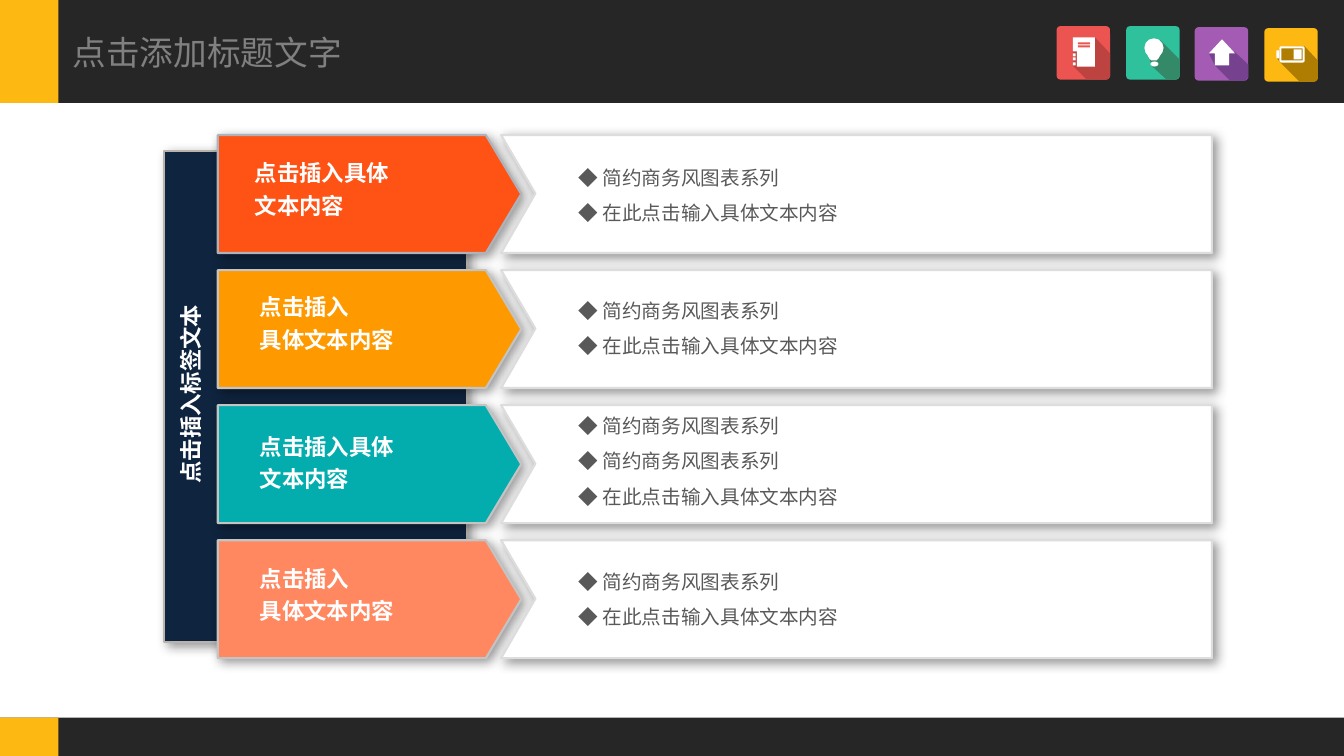
from lxml.etree import SubElement
from pptx import Presentation
from pptx.dml.color import RGBColor
from pptx.enum.shapes import MSO_SHAPE
from pptx.enum.text import MSO_AUTO_SIZE, PP_ALIGN
from pptx.oxml.ns import qn
from pptx.util import Inches, Pt

CELL = Inches(0.01)
COLUMNS, ROWS = 1333, 750
HEADER, FOOTER, ACCENT = 102, 38, 58
TILE = 53
CARD_TOP, CARD_PITCH, CARD_HEIGHT = 134, 134, 117

COLORS = {
    "bar": "262626", "yellow": "FDB812", "yellow_dark": "AF7D01",
    "green": "2FC19C", "green_dark": "348A68",
    "purple": "A45BB4", "purple_dark": "76428F",
    "red": "EC5451", "red_dark": "BD4341",
    "navy": "0F243E", "navy_edge": "B8B3AB", "white": "FFFFFF",
    "orange": "FF5215", "amber": "FF9900", "teal": "03ADAE", "salmon": "FF8860",
    "orange_edge": "AEB3BB", "grey_edge": "C4C4C4", "card_edge": "DDDDDD",
    "body": "595959", "title": "808080", "black": "000000",
}

SERIES = "◆ 简约商务风图表系列"
DETAIL = "◆ 在此点击输入具体文本内容"
CARDS = [
    ("orange", "orange_edge", ["点击插入具体", "文本内容"], (243, 148), [SERIES, DETAIL], 148),
    ("amber", "grey_edge", ["点击插入", "具体文本内容"], (248, 281), [SERIES, DETAIL], 280),
    ("teal", "grey_edge", ["点击插入具体", "文本内容"], (248, 419), [SERIES, SERIES, DETAIL], 394),
    ("salmon", "grey_edge", ["点击插入", "具体文本内容"], (248, 550), [SERIES, DETAIL], 549),
]


def rgb(name):
    return RGBColor.from_string(COLORS[name])


def paint(shape, fill, edge=None, width=1.5):
    shape.shadow.inherit = False
    if fill:
        shape.fill.solid()
        shape.fill.fore_color.rgb = rgb(fill)
    else:
        shape.fill.background()
    if edge:
        shape.line.color.rgb = rgb(edge)
        shape.line.width = Pt(width)
    else:
        shape.line.fill.background()
    return shape


def block(slide, left, top, width, height, fill, edge=None, kind=MSO_SHAPE.RECTANGLE):
    frame = [n * CELL for n in (left, top, width, height)]
    return paint(slide.shapes.add_shape(kind, *frame), fill, edge)


def polygon(slide, points, fill, edge=None):
    outline = slide.shapes.build_freeform(*points[0], scale=CELL)
    outline.add_line_segments(points[1:], close=True)
    return paint(outline.convert_to_shape(), fill, edge)


def cast_shadow(shape):
    effects = shape._element.spPr.find(qn("a:effectLst"))
    shadow = SubElement(effects, qn("a:outerShdw"), blurRad=str(Pt(8)), dist=str(Pt(3)),
                        dir=str(45 * 60000), algn="tl", rotWithShape="0")
    tint = SubElement(shadow, qn("a:srgbClr"), val=COLORS["black"])
    SubElement(tint, qn("a:alpha"), val="40000")


def write(slide, left, top, width, height, lines, size, color, spacing=1.0,
          bold=False, align=PP_ALIGN.LEFT, wrap=True):
    box = slide.shapes.add_textbox(*[n * CELL for n in (left, top, width, height)])
    frame = box.text_frame
    frame.word_wrap = wrap
    frame.auto_size = MSO_AUTO_SIZE.SHAPE_TO_FIT_TEXT
    for index, line in enumerate(lines):
        paragraph = frame.add_paragraph() if index else frame.paragraphs[0]
        paragraph.alignment = align
        paragraph.line_spacing = spacing
        run = paragraph.add_run()
        run.text = line
        run.font.name = "Arial"
        run.font.size = Pt(size)
        run.font.bold = bold
        run.font.color.rgb = rgb(color)
    return box


def tile(slide, left, top, color, shade):
    face = block(slide, left, top, TILE, TILE, color, kind=MSO_SHAPE.ROUNDED_RECTANGLE)
    face.adjustments[0] = 0.07
    polygon(slide, [(left + x, top + y) for x, y in shade], color + "_dark")


def notebook(slide, left, top):
    tile(slide, left, top, "red",
         [(38, 11), (53, 27), (53, 50), (50, 53), (30, 53), (16, 39), (16, 24)])
    block(slide, left + 20, top + 11, 18, 29, "white")
    block(slide, left + 16, top + 11, 4, 14, "white")
    for tab in (27, 31, 36):
        block(slide, left + 16, top + tab, 3, 3, "white")
    for stripe in (16, 19):
        block(slide, left + 21, top + stripe, 12, 2, "red")


def bulb(slide, left, top):
    tile(slide, left, top, "green",
         [(34, 14), (53, 33), (53, 50), (50, 53), (40, 53), (25, 39), (20, 17)])
    block(slide, left + 18, top + 12, 19, 19, "white", kind=MSO_SHAPE.OVAL)
    polygon(slide, [(left + x, top + y) for x, y in
                    [(19, 25), (36, 25), (32, 32), (30, 34), (25, 34), (23, 32)]], "white")
    block(slide, left + 24, top + 35, 8, 5, "white", kind=MSO_SHAPE.OVAL)


def up_arrow(slide, left, top):
    tile(slide, left, top, "purple",
         [(39, 24), (53, 37), (53, 50), (50, 53), (35, 53), (20, 38), (14, 26)])
    arrow = block(slide, left + 14, top + 12, 26, 26, "white", kind=MSO_SHAPE.UP_ARROW)
    arrow.adjustments[0] = 0.54
    arrow.adjustments[1] = 0.54


def battery(slide, left, top):
    tile(slide, left, top, "yellow",
         [(40, 18), (53, 32), (53, 50), (50, 53), (35, 53), (15, 33), (12, 29), (16, 19)])
    case = block(slide, left + 16, top + 19, 23, 14, "yellow_dark", "white",
                 MSO_SHAPE.ROUNDED_RECTANGLE)
    case.adjustments[0] = 0.07
    block(slide, left + 12, top + 22, 3, 8, "white")
    block(slide, left + 29, top + 21, 8, 10, "white")


def bar(slide, top, height):
    block(slide, 0, top, COLUMNS, height, "bar")
    block(slide, 0, top, ACCENT, height, "yellow")


def side_label(slide):
    cast_shadow(block(slide, 163, 150, 300, 487, "navy", "navy_edge"))
    label = write(slide, 49, 370, 274, 42, ["点击插入标签文本"], 16, "white", 1.2,
                  bold=True, align=PP_ALIGN.CENTER)
    label.rotation = 270


def card(slide, top, color, edge, heading, heading_at, points, points_top):
    bottom, middle = top + CARD_HEIGHT, top + CARD_HEIGHT // 2
    pointer = block(slide, 216, top, 301, CARD_HEIGHT, color, edge, MSO_SHAPE.PENTAGON)
    pointer.adjustments[0] = 0.3
    cast_shadow(pointer)
    cast_shadow(polygon(slide, [(497, top), (1202, top), (1202, bottom), (497, bottom),
                                (531, middle)], "white", "card_edge"))
    write(slide, 564, points_top, 506, 35 * len(points) + 11, points, 14, "body", 1.5)
    write(slide, *heading_at, 254, 75, heading, 16, "white", 1.2, bold=True)


def main():
    deck = Presentation()
    deck.slide_width, deck.slide_height = Inches(13.33), Inches(7.5)
    slide = deck.slides.add_slide(deck.slide_layouts[6])
    bar(slide, 0, HEADER)
    bar(slide, ROWS - FOOTER, FOOTER)
    notebook(slide, 1048, 26)
    bulb(slide, 1117, 26)
    up_arrow(slide, 1185, 27)
    battery(slide, 1254, 28)
    side_label(slide)
    for index, content in enumerate(CARDS):
        card(slide, CARD_TOP + index * CARD_PITCH, *content)
    write(slide, 61, 27, 289, 50, ["点击添加标题文字"], 24, "title",
          align=PP_ALIGN.CENTER, wrap=False)
    deck.save("out.pptx")


if __name__ == "__main__":
    main()
